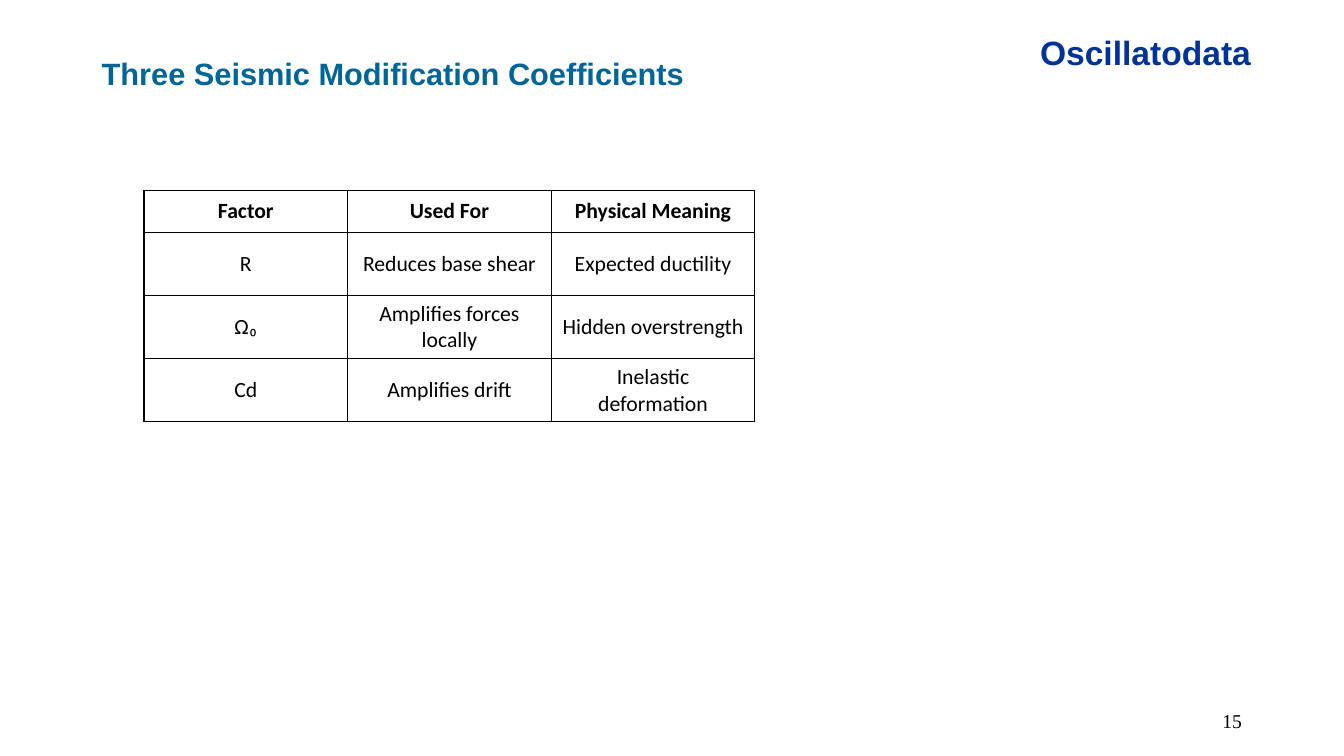
import pptx
import pptx.dml.color
import pptx.enum.text
import pptx.oxml
import pptx.oxml.ns
import pptx.util
from pptx.util import Cm

PP_ALIGN = pptx.enum.text.PP_ALIGN
ANCHOR = pptx.enum.text.MSO_ANCHOR
AUTO_SIZE = pptx.enum.text.MSO_AUTO_SIZE

TITLE = "Three Seismic Modification Coefficients"
HEADER = "Oscillatodata"
PAGE_NUMBER = "15"
FACTORS = [
    ("Factor", "Used For", "Physical Meaning"),
    ("R", "Reduces base shear", "Expected ductility"),
    ("Ω₀", "Amplifies forces locally", "Hidden overstrength"),
    ("Cd", "Amplifies drift", "Inelastic deformation"),
]
COL_WIDTH = Cm(5.13)
HEAD_HEIGHT, ROW_HEIGHT = Cm(1.06), Cm(1.59)


def rgb(value):
    return pptx.dml.color.RGBColor.from_string(value)


def write(tf, text, font, size, color, bold=False, align=PP_ALIGN.LEFT):
    p = tf.paragraphs[0]
    p.alignment = align
    r = p.add_run()
    r.text = text
    r.font.name, r.font.size, r.font.bold = font, pptx.util.Pt(size), bold
    r.font.color.rgb = rgb(color)


def add_borders(cell, color="000000", width=pptx.util.Pt(1)):
    tcPr = cell._tc.get_or_add_tcPr()
    for i, side in enumerate(("lnL", "lnR", "lnT", "lnB")):
        tcPr.insert(i, pptx.oxml.parse_xml(
            f'<a:{side} {pptx.oxml.ns.nsdecls("a")} w="{width}"><a:solidFill>'
            f'<a:srgbClr val="{color}"/></a:solidFill></a:{side}>'))


prs = pptx.Presentation()
prs.slide_width, prs.slide_height = Cm(33.87), Cm(19.05)
s = prs.slides.add_slide(prs.slide_layouts[5])

title = s.shapes.title
title.left, title.top, title.width, title.height = Cm(2.31), Cm(1.25), Cm(15.39), Cm(1.19)
tf = title.text_frame
tf.word_wrap = False
tf.auto_size = AUTO_SIZE.NONE
tf.vertical_anchor = ANCHOR.TOP
write(tf, TITLE, "Arial", 22, "006699", bold=True)

header = s.shapes.add_textbox(Cm(25.96), Cm(0.69), Cm(5.97), Cm(1.27))
header.text_frame.word_wrap = False
header.text_frame.auto_size = AUTO_SIZE.SHAPE_TO_FIT_TEXT
write(header.text_frame, HEADER, "Arial", 24, "003399", bold=True)

number = s.shapes.add_textbox(Cm(23.93), Cm(17.65), Cm(7.62), Cm(1.02))
number.text_frame.word_wrap = True
number.text_frame.vertical_anchor = ANCHOR.MIDDLE
write(number.text_frame, PAGE_NUMBER, "Times New Roman", 14, "010000", align=PP_ALIGN.RIGHT)

n_rows, n_cols = len(FACTORS), len(FACTORS[0])
table = s.shapes.add_table(
    n_rows, n_cols, Cm(3.63), Cm(4.8),
    COL_WIDTH * n_cols, HEAD_HEIGHT + ROW_HEIGHT * (n_rows - 1)).table
for col in table.columns:
    col.width = COL_WIDTH
for i, texts in enumerate(FACTORS):
    table.rows[i].height = ROW_HEIGHT if i else HEAD_HEIGHT
    for j, text in enumerate(texts):
        cell = table.cell(i, j)
        cell.fill.background()
        cell.vertical_anchor = ANCHOR.MIDDLE
        add_borders(cell)
        write(cell.text_frame, text, "Calibri", 15.5, "000000",
              bold=i == 0, align=PP_ALIGN.CENTER)

prs.save("out.pptx")
